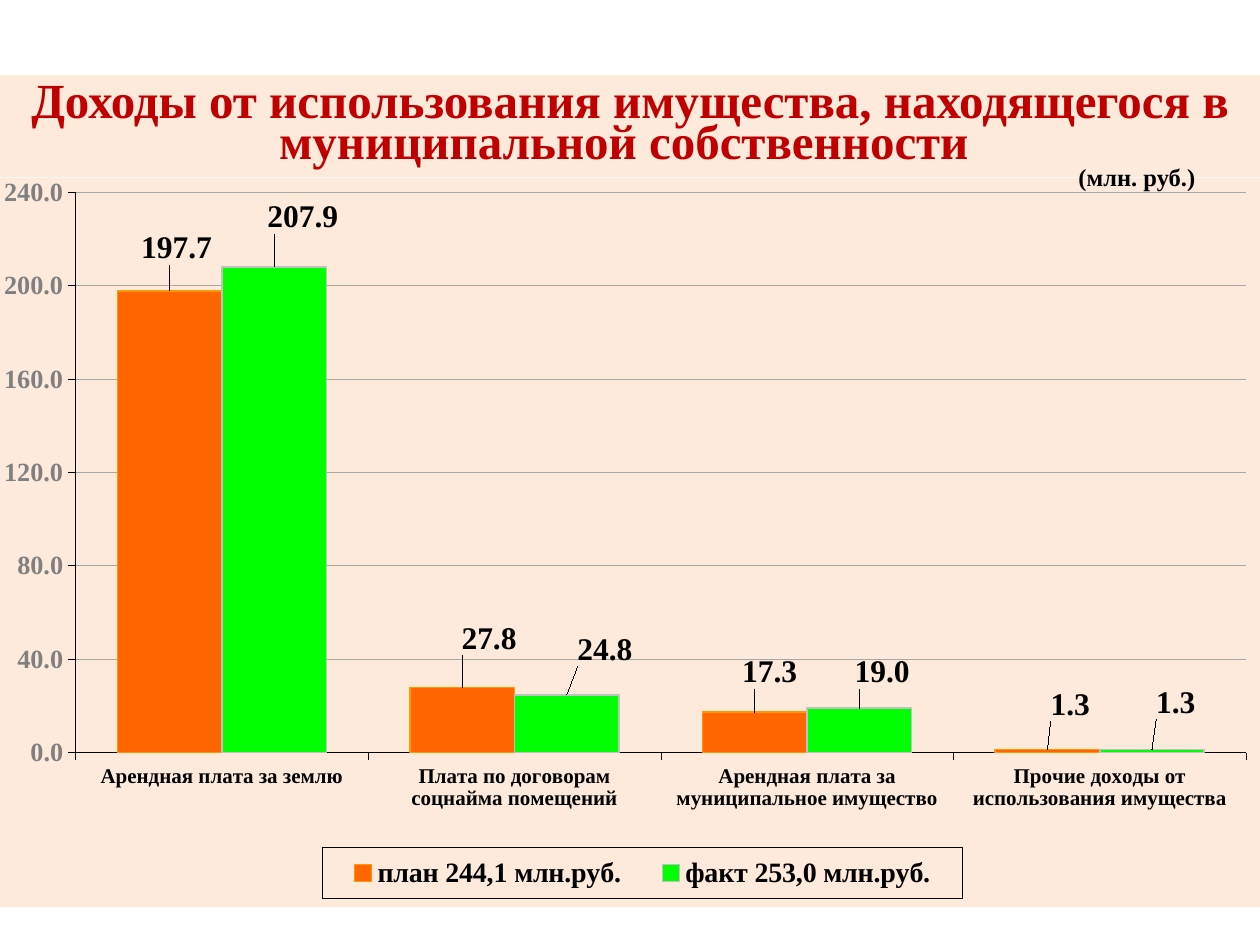
from dataclasses import dataclass

from lxml import etree
from pptx import Presentation
from pptx import util as u
from pptx.chart.data import CategoryChartData
from pptx.dml.color import RGBColor
from pptx.enum import chart as ch, shapes, text
from pptx.oxml import parse_xml
from pptx.oxml.ns import nsdecls, qn


@dataclass(frozen=True)
class Theme:
    font: str = "Times New Roman"
    cream: str = "FDEADA"
    red: str = "C00000"
    black: str = "000000"
    axis_gray: str = "808080"
    grid_gray: str = "A6A6A6"
    title_size: float = 28
    unit_size: float = 14
    category_size: float = 12
    scale_size: float = 15
    legend_size: float = 16
    value_size: float = 18
    hairline: float = 0.25


@dataclass(frozen=True)
class Income:
    """One series; shifts are the (right, down) label offsets in cm."""
    name: str
    amounts: tuple
    fill: str
    line: str
    shifts: tuple


SLIDE_W, SLIDE_H = 25.4, 19.05
CHART_TOP, CHART_H = 3.58, 14.71
NUMBER_FORMAT = "0.0"
SOURCES = (
    "Арендная плата за землю",
    "Плата по договорам соцнайма помещений",
    "Арендная плата за муниципальное имущество",
    "Прочие доходы от использования имущества",
)
INCOMES = (
    Income("план 244,1 млн.руб.", (197.7, 27.8, 17.3, 1.3), "FF6600", "FF9900",
           ((0.14, -0.42), (0.54, -0.54), (0.3, -0.36), (0.46, -0.46))),
    Income("факт 253,0 млн.руб.", (207.9, 24.8, 19.0, 1.3), "00FF00", "C0C0C0",
           ((0.58, -0.56), (0.77, -0.46), (0.46, -0.28), (0.48, -0.5))),
)


def rgb(code):
    return RGBColor.from_string(code)


def manual_layout(x, y, w=None, h=None, inner=False):
    """Layout element; without a size, x and y shift from the default place."""
    parts = [("layoutTarget", "inner")] if inner else []
    if w is not None:
        parts += [("xMode", "edge"), ("yMode", "edge")]
    parts += [("x", x), ("y", y)]
    if w is not None:
        parts += [("w", w), ("h", h)]
    body = "".join(f'<c:{tag} val="{value}"/>' for tag, value in parts)
    return parse_xml(f"<c:layout {nsdecls('c')}><c:manualLayout>{body}"
                     "</c:manualLayout></c:layout>")


def area_style(fill=None, line=None, width=0.75):
    """Shape properties for chart parts that python-pptx cannot format."""
    def paint(code):
        if code is None:
            return "<a:noFill/>"
        return f'<a:solidFill><a:srgbClr val="{code}"/></a:solidFill>'
    return parse_xml(f"<c:spPr {nsdecls('c', 'a')}>{paint(fill)}"
                     f'<a:ln w="{u.Pt(width)}">{paint(line)}</a:ln></c:spPr>')


class SlideBuilder:
    def __init__(self, slide, theme):
        self.slide = slide
        self.theme = theme

    def style_font(self, font, size, color):
        font.name = self.theme.font
        font.size = u.Pt(size)
        font.bold = True
        font.color.rgb = rgb(color)

    def style_line(self, line, color, width):
        line.color.rgb = rgb(color)
        line.width = u.Pt(width)

    def title(self, wording, top, height):
        band = self.slide.shapes.add_shape(
            shapes.MSO_SHAPE.RECTANGLE, 0, u.Cm(top), u.Cm(SLIDE_W), u.Cm(height))
        band.shadow.inherit = False
        band.fill.solid()
        band.fill.fore_color.rgb = rgb(self.theme.cream)
        band.line.fill.background()
        frame = band.text_frame
        frame.word_wrap = True
        frame.vertical_anchor = text.MSO_ANCHOR.MIDDLE
        heading = frame.paragraphs[0]
        heading.text = wording
        heading.alignment = text.PP_ALIGN.CENTER
        heading.line_spacing = 0.7
        self.style_font(heading.font, self.theme.title_size, self.theme.red)

    def note(self, wording, left, top, width, height):
        box = self.slide.shapes.add_textbox(
            u.Cm(left), u.Cm(top), u.Cm(width), u.Cm(height))
        box.text_frame.word_wrap = True
        unit = box.text_frame.paragraphs[0]
        unit.text = wording
        self.style_font(unit.font, self.theme.unit_size, self.theme.black)

    def column_chart(self, categories, incomes):
        data = CategoryChartData(number_format=NUMBER_FORMAT)
        data.categories = categories
        for income in incomes:
            data.add_series(income.name, income.amounts)
        chart = self.slide.shapes.add_chart(
            ch.XL_CHART_TYPE.COLUMN_CLUSTERED, 0, u.Cm(CHART_TOP),
            u.Cm(SLIDE_W), u.Cm(CHART_H), data).chart
        chart.has_title = False
        self.style_font(chart.font, self.theme.value_size, self.theme.black)
        plot = chart.plots[0]
        plot.gap_width = 80
        plot.overlap = 0
        plot.vary_by_categories = False
        for series, income in zip(plot.series, incomes):
            self.columns(series, income)
        self.axes(chart)
        self.legend(chart)
        self.areas(chart)

    def columns(self, series, income):
        series.format.fill.solid()
        series.format.fill.fore_color.rgb = rgb(income.fill)
        self.style_line(series.format.line, income.line, 1)
        labels = series.data_labels
        labels.show_value = True
        labels.number_format = NUMBER_FORMAT
        labels.number_format_is_linked = False
        self.style_font(labels.font, self.theme.value_size, self.theme.black)
        for index, (right, down) in enumerate(income.shifts):
            label = series.points[index].data_label
            self.style_font(label.font, self.theme.value_size, self.theme.black)
            label.position = ch.XL_LABEL_POSITION.OUTSIDE_END
            # The schema wants the layout and number format right after idx.
            element = labels._element.findall(qn("c:dLbl"))[index]
            element.insert(1, manual_layout(round(right / SLIDE_W, 4),
                                            round(down / CHART_H, 4)))
            number = etree.Element(qn("c:numFmt"), formatCode=NUMBER_FORMAT,
                                   sourceLinked="0")
            element.insert(2, number)

    def axes(self, chart):
        theme = self.theme
        names, scale = chart.category_axis, chart.value_axis
        for axis, size, color in ((names, theme.category_size, theme.black),
                                  (scale, theme.scale_size, theme.axis_gray)):
            self.style_font(axis.tick_labels.font, size, color)
            self.style_line(axis.format.line, theme.black, theme.hairline)
            axis.major_tick_mark = ch.XL_TICK_MARK.OUTSIDE
            axis.minor_tick_mark = ch.XL_TICK_MARK.NONE
        names.tick_label_position = ch.XL_TICK_LABEL_POSITION.LOW
        scale.minimum_scale, scale.maximum_scale, scale.major_unit = 0, 240, 40
        scale.tick_labels.number_format = NUMBER_FORMAT
        scale.tick_labels.number_format_is_linked = False
        scale.has_major_gridlines = True
        self.style_line(scale.major_gridlines.format.line,
                        theme.grid_gray, theme.hairline)

    def legend(self, chart):
        chart.has_legend = True
        legend = chart.legend
        legend.position = ch.XL_LEGEND_POSITION.BOTTOM
        legend.include_in_layout = False
        self.style_font(legend.font, self.theme.legend_size, self.theme.black)
        element = legend._element
        for old in element.findall(qn("c:layout")):
            element.remove(old)
        element.find(qn("c:legendPos")).addnext(manual_layout(0.256, 0.918, 0.508, 0.07))
        element.find(qn("c:txPr")).addprevious(area_style(line=self.theme.black))

    def areas(self, chart):
        """Place the plot and fill the plot and chart backgrounds."""
        space = chart._chartSpace
        body = space.find(qn("c:chart"))
        plot_area = body.find(qn("c:plotArea"))
        for old in plot_area.findall(qn("c:layout")):
            plot_area.remove(old)
        plot_area.insert(0, manual_layout(0.06, 0.019, 0.929, 0.769, inner=True))
        plot_area.append(area_style(self.theme.cream))
        body.addnext(area_style(self.theme.cream))


def main():
    deck = Presentation()
    deck.slide_width, deck.slide_height = u.Cm(SLIDE_W), u.Cm(SLIDE_H)
    builder = SlideBuilder(deck.slides.add_slide(deck.slide_layouts[6]), Theme())
    builder.title("Доходы от использования имущества, находящегося в "
                  "муниципальной собственности ", 1.52, 2.06)
    builder.column_chart(SOURCES, INCOMES)
    builder.note("(млн. руб.)", 21.49, 3.15, 3, 0.86)
    deck.save("out.pptx")


if __name__ == "__main__":
    main()
